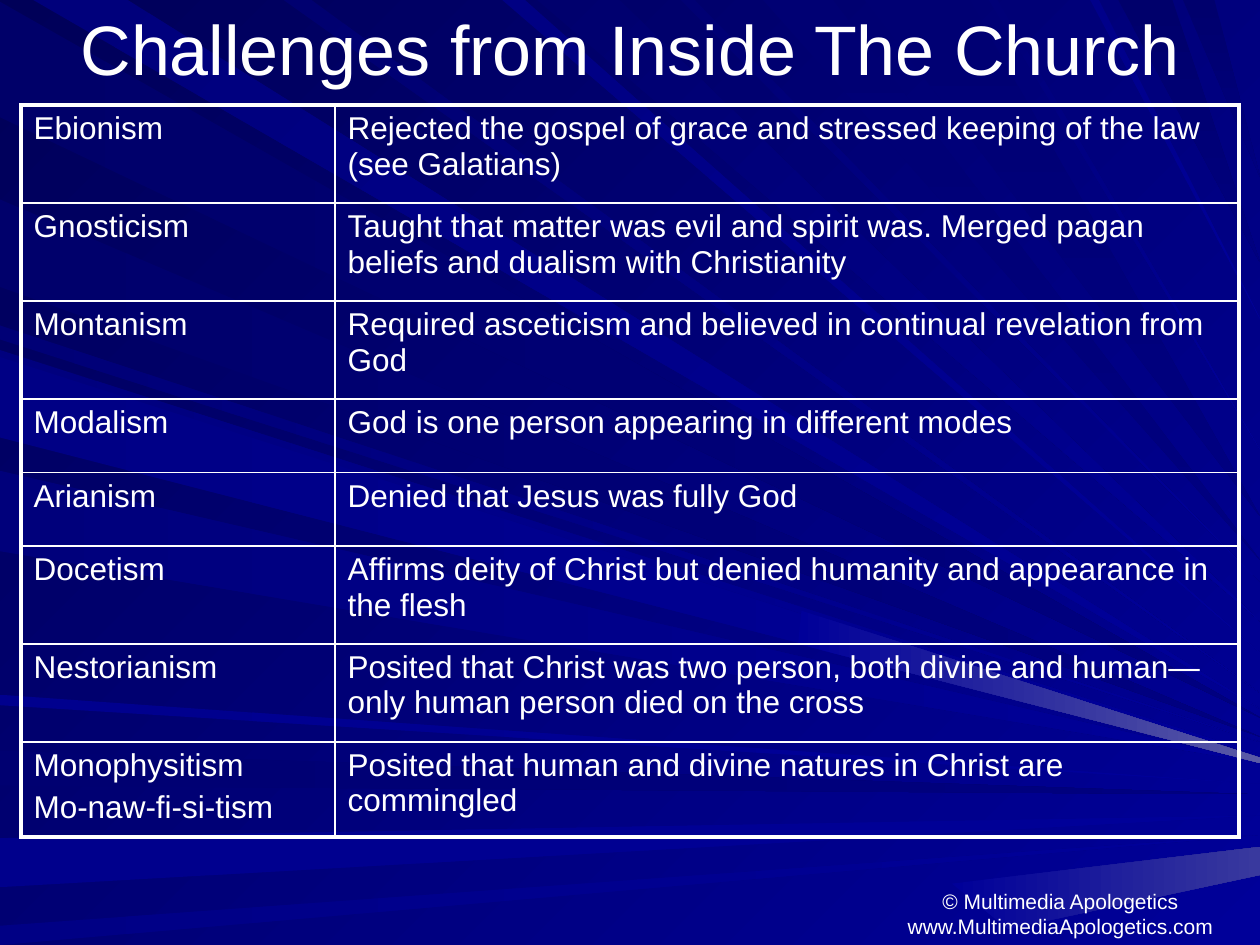
from lxml import etree
from pptx import Presentation
from pptx.dml.color import RGBColor
from pptx.enum.text import MSO_ANCHOR, PP_ALIGN
from pptx.oxml.ns import qn
from pptx.util import Pt

LEFT, CENTER = PP_ALIGN.LEFT, PP_ALIGN.CENTER
TOP, MIDDLE, BOTTOM = MSO_ANCHOR.TOP, MSO_ANCHOR.MIDDLE, MSO_ANCHOR.BOTTOM
WIDE, HIGH = 720, 540
WHITE, NAVY, BLUE = "FFFFFF", "000080", "000099"
THIN, THICK = 1, 2.25

# Rays from the top edge: start colour, end colour, from x, to x, tip y
FALLS = [
    ("00007B", BLUE, 19, 73, 405),
    ("000083", BLUE, 287, 300, 373),
    ("00006D", BLUE, 307, 354, 355),
    ("000073", BLUE, 389, 397, 333),
    ("000073", NAVY, 436, 476, 320),
    ("00006B", NAVY, 639, 670, 150),
    ("00006D", NAVY, 676, 694, 101),
    ("000070", BLUE, 162, 178, 396),
    ("000073", NAVY, 494, 554, 295),
    ("000078", BLUE, 565, 570, 257),
    ("00008A", BLUE, 623, 628, 182),
]

# Rays from the left edge: start colour, end colour, from y, to y, tip y
BEAMS = [
    ("000069", NAVY, 1, 67, 410),
    ("000071", NAVY, 429, 449, 454),
    ("00008C", BLUE, 479, 507, 466),
    ("000085", BLUE, 529, 540, 477),
    ("000076", BLUE, 186, 194, 424),
    ("00006B", NAVY, 114, 164, 421),
    ("00007E", BLUE, 200, 246, 431),
    ("00007B", BLUE, 269, 315, 436),
    ("00008E", BLUE, 397, 403, 448),
    ("000085", BLUE, 204, 250, 435),
]

# Each row: height, name, belief
ROWS = [
    (56, "Ebionism", "Rejected the gospel of grace and stressed keeping of the law (see Galatians)"),
    (56, "Gnosticism", "Taught that matter was evil and spirit was. Merged pagan beliefs and dualism with Christianity"),
    (56, "Montanism", "Required asceticism and believed in continual revelation from God"),
    (42, "Modalism", "God is one person appearing in different modes"),
    (42, "Arianism", "Denied that Jesus was fully God"),
    (56, "Docetism", "Affirms deity of Christ but denied humanity and appearance in the flesh"),
    (56, "Nestorianism", "Posited that Christ was two person, both divine and human—only human person died on the cross"),
    (54.5, "Monophysitism\nMo-naw-fi-si-tism", "Posited that human and divine natures in Christ are commingled"),
]


def tint(code):
    return RGBColor.from_string(code)


def paint(fill, start, end, angle):
    """Fill with a two-colour gradient turned clockwise."""
    fill.gradient()
    fill.gradient_angle = -angle % 360
    for stop, code in zip(fill.gradient_stops, (start, end)):
        stop.color.rgb = tint(code)


def write(frame, text, size, align=LEFT, gap=0):
    """Put each line of text in its own paragraph."""
    for i, line in enumerate(text.split("\n")):
        para = frame.add_paragraph() if i else frame.paragraphs[0]
        para.text = line
        para.alignment = align
        if i and gap:
            para.space_before = Pt(gap)
        font = para.font
        font.name, font.size, font.color.rgb = "Arial", Pt(size), tint(WHITE)


def edge(cell, widths):
    """Draw the left, right, top and bottom borders of a cell."""
    props = cell._tc.get_or_add_tcPr()
    for i, (side, width) in enumerate(zip("LRTB", widths)):
        line = etree.Element(qn(f"a:ln{side}"), w=str(Pt(width)))
        fill = etree.SubElement(line, qn("a:solidFill"))
        etree.SubElement(fill, qn("a:srgbClr"), val=WHITE)
        props.insert(i, line)


class Deck:
    def __init__(self):
        self.show = Presentation()
        self.show.slide_width, self.show.slide_height = Pt(WIDE), Pt(HIGH)
        self.slide = self.show.slides.add_slide(self.show.slide_layouts[6])
        self.shapes = self.slide.shapes

    def back(self, start, end, angle):
        paint(self.slide.background.fill, start, end, angle)

    def ray(self, start, end, angle, spots):
        first, *rest = [(Pt(x), Pt(y)) for x, y in spots]
        pen = self.shapes.build_freeform(*first)
        pen.add_line_segments(rest, close=True)
        shape = pen.convert_to_shape()
        shape.shadow.inherit = False
        shape.line.fill.background()
        paint(shape.fill, start, end, angle)

    def text(self, text, x, y, w, h, size, anchor):
        frame = self.shapes.add_textbox(Pt(x), Pt(y), Pt(w), Pt(h)).text_frame
        frame.word_wrap = True
        frame.vertical_anchor = anchor
        write(frame, text, size, align=CENTER)

    def table(self, x, y, cols, rows):
        high = sum(row[0] for row in rows)
        grid = self.shapes.add_table(len(rows), len(cols), Pt(x), Pt(y),
                                     Pt(sum(cols)), Pt(high)).table
        grid.first_row = grid.horz_banding = False
        for col, width in zip(grid.columns, cols):
            col.width = Pt(width)
        for r, (height, *texts) in enumerate(rows):
            grid.rows[r].height = Pt(height)
            for c, text in enumerate(texts):
                cell = grid.cell(r, c)
                cell.fill.background()
                cell.vertical_anchor = TOP
                write(cell.text_frame, text, 18, gap=3.6)
                outer = (c == 0, c == len(cols) - 1, r == 0, r == len(rows) - 1)
                edge(cell, [THICK if out else THIN for out in outer])


def main():
    deck = Deck()
    deck.back("000058", BLUE, 45)
    for start, end, near, far, tip in FALLS:
        angle = 90 if end == NAVY else 45
        deck.ray(start, end, angle, [(near, 0), (far, 0), (WIDE, tip)])
    for start, end, near, far, tip in BEAMS:
        deck.ray(start, end, 0, [(0, near), (0, far), (WIDE, tip)])
    deck.ray(BLUE, "39399E", 0, [(WIDE, 500), (WIDE, 484), (544, 505), (576, 531)])
    deck.ray(BLUE, "5A5AA6", 0, [(WIDE, 433), (458, 349), (456, 368), (WIDE, 436)])
    deck.text("© Multimedia Apologetics\nwww.MultimediaApologetics.com",
              492, 504, 228, 36, 12, BOTTOM)
    deck.text("Challenges from Inside The Church", 36, 0, 648, 54, 40, MIDDLE)
    deck.table(12, 60, (179.5, 516.5), ROWS)
    deck.show.save("out.pptx")


if __name__ == "__main__":
    main()
